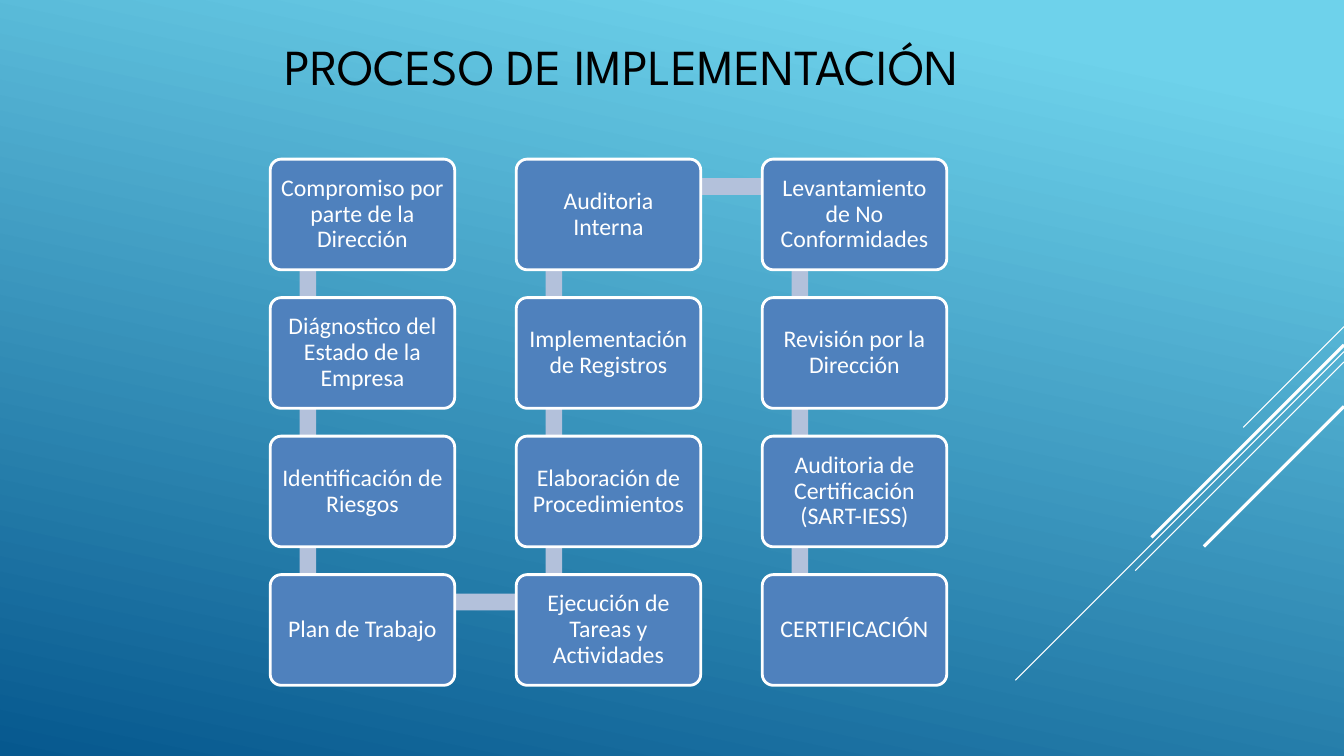
from lxml.etree import SubElement
from pptx import Presentation
from pptx.dml.color import RGBColor
from pptx.enum.shapes import MSO_CONNECTOR as Connector, MSO_SHAPE as Shape
from pptx.enum.text import MSO_ANCHOR as Anchor, PP_ALIGN as Align
from pptx.oxml.ns import qn
from pptx.util import Cm, Pt

BLACK = RGBColor(0x00, 0x00, 0x00)
WHITE = RGBColor(0xFF, 0xFF, 0xFF)
SKY = RGBColor(0x6E, 0xD2, 0xEB)
OCEAN = RGBColor(0x06, 0x58, 0x8E)
STEP_BLUE = RGBColor(0x4F, 0x81, 0xBD)
LINK_BLUE = RGBColor(0xB3, 0xC1, 0xDB)

SLIDE_W, SLIDE_H = 33.87, 19.05
GRID_LEFT, GRID_TOP = 6.81, 4.01
COLUMN_PITCH, ROW_PITCH = 6.2, 3.49
STEP_W, STEP_H = 4.65, 2.79
LINK_THICKNESS = 0.42
ROWS = 4

STEPS = [
    "Compromiso por parte de la Dirección",
    "Diágnostico del Estado de la Empresa",
    "Identificación de Riesgos",
    "Plan de Trabajo",
    "Ejecución de Tareas y Actividades",
    "Elaboración de Procedimientos",
    "Implementación de Registros",
    "Auditoria Interna",
    "Levantamiento de No Conformidades",
    "Revisión por la Dirección",
    "Auditoria de Certificación (SART-IESS)",
    "CERTIFICACIÓN",
]
DIAGONALS = [
    (8.23, 2.54, 0.75),
    (8.86, 8.28, 0.75),
    (9.12, 5.26, 0.75),
    (8.69, 4.85, 2.25),
    (10.24, 3.53, 2.25),
]


def add_block(kind, left, top, width, height, color):
    block = slide.shapes.add_shape(kind, Cm(left), Cm(top), Cm(width), Cm(height))
    block.shadow.inherit = False
    block.fill.solid()
    block.fill.fore_color.rgb = color
    block.line.fill.background()
    return block


def write_centred(frame, text, font_name, size, color):
    frame.word_wrap = True
    frame.vertical_anchor = Anchor.MIDDLE
    paragraph = frame.paragraphs[0]
    paragraph.alignment = Align.CENTER
    run = paragraph.add_run()
    run.text = text
    run.font.name = font_name
    run.font.size = Pt(size)
    run.font.color.rgb = color
    return paragraph


prs = Presentation()
prs.slide_width, prs.slide_height = Cm(SLIDE_W), Cm(SLIDE_H)
slide = prs.slides.add_slide(prs.slide_layouts[5])

backdrop = slide.background.fill
backdrop.gradient()
backdrop.gradient_angle = 258
for stop, color, position in zip(backdrop.gradient_stops, (SKY, OCEAN), (0.1, 1)):
    stop.color.rgb = color
    stop.position = position

for top, reach, weight in DIAGONALS:
    diagonal = slide.shapes.add_connector(
        Connector.STRAIGHT, Cm(SLIDE_W), Cm(top), Cm(SLIDE_W - reach), Cm(top + reach)
    )
    diagonal.line.color.rgb = WHITE
    diagonal.line.width = Pt(weight)
    SubElement(diagonal._element.spPr, qn("a:effectLst"))

title = slide.shapes.title
title.left, title.top, title.width, title.height = Cm(3.81), Cm(0.58), Cm(23.7), Cm(2.13)
write_centred(title.text_frame, "PROCESO DE IMPLEMENTACIÓN", "League Spartan", 36, BLACK)

positions = []
for index in range(len(STEPS)):
    column, row = divmod(index, ROWS)
    if column % 2:
        row = ROWS - 1 - row
    positions.append((GRID_LEFT + column * COLUMN_PITCH, GRID_TOP + row * ROW_PITCH))

for (left, top), (next_left, next_top) in zip(positions, positions[1:]):
    if left == next_left:
        add_block(Shape.RECTANGLE, left + 0.74, min(top, next_top) + 0.71,
                  LINK_THICKNESS, ROW_PITCH, LINK_BLUE)
    else:
        add_block(Shape.RECTANGLE, left + 0.97, top + 0.48,
                  COLUMN_PITCH, LINK_THICKNESS, LINK_BLUE)

for (left, top), label in zip(positions, STEPS):
    step = add_block(Shape.ROUNDED_RECTANGLE, left, top, STEP_W, STEP_H, STEP_BLUE)
    step.adjustments[0] = 0.1
    step.line.color.rgb = WHITE
    step.line.width = Pt(2)
    frame = step.text_frame
    frame.margin_left = frame.margin_right = Cm(0.17)
    frame.margin_top = frame.margin_bottom = Cm(0.17)
    write_centred(frame, label, "Calibri", 17, WHITE).line_spacing = 0.9

prs.save("out.pptx")
